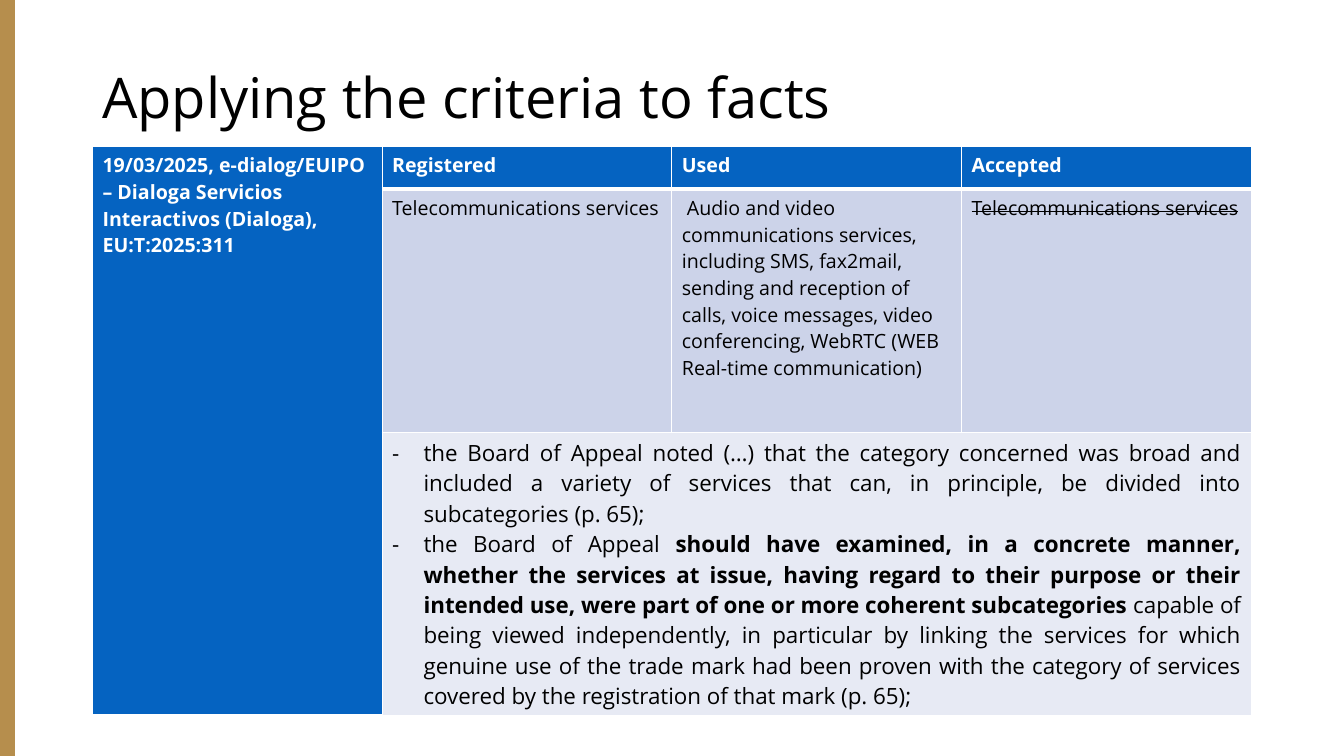
from lxml.etree import SubElement, fromstring
from pptx import Presentation
from pptx.dml.color import RGBColor
from pptx.enum.shapes import MSO_SHAPE as Shape
from pptx.enum.text import MSO_ANCHOR as Anchor, PP_ALIGN as Align
from pptx.oxml.ns import nsdecls, qn
from pptx.util import Cm, Pt

COLORS = {
    "gold": "B68E4D",
    "blue": "0563C1",
    "services": "CCD3E9",
    "findings": "E7EAF4",
    "white": "FFFFFF",
    "black": "000000",
}


def style_run(span, size, color, bold=False):
    span.font.name = "Open Sans"
    span.font.size = Pt(size)
    span.font.bold = bold
    span.font.color.rgb = RGBColor.from_string(COLORS[color])


def style_cell(cell, fill, top, bottom):
    cell.fill.solid()
    cell.fill.fore_color.rgb = RGBColor.from_string(COLORS[fill])
    properties = cell._tc.get_or_add_tcPr()
    borders = [("lnL", 1), ("lnR", 1), ("lnT", top), ("lnB", bottom)]
    for position, (side, width) in enumerate(borders):
        line = fromstring(
            f'<a:{side} {nsdecls("a")} w="{Pt(width)}"><a:solidFill>'
            f'<a:srgbClr val="{COLORS["white"]}"/></a:solidFill></a:{side}>'
        )
        properties.insert(position, line)


deck = Presentation()
deck.slide_width = Cm(33.87)
deck.slide_height = Cm(19.05)
page = deck.slides.add_slide(deck.slide_layouts[6])

stripe = page.shapes.add_shape(Shape.RECTANGLE, 0, 0, Cm(0.38), deck.slide_height)
stripe.shadow.inherit = False
stripe.fill.solid()
stripe.fill.fore_color.rgb = RGBColor.from_string(COLORS["gold"])
stripe.line.fill.background()

title = page.shapes.add_textbox(Cm(2.33), Cm(1.02), Cm(29.21), Cm(3.02))
title.text_frame.word_wrap = True
title.text_frame.vertical_anchor = Anchor.MIDDLE
title.text_frame.text = "Applying the criteria to facts"
title.text_frame.paragraphs[0].line_spacing = 0.9
style_run(title.text_frame.paragraphs[0].runs[0], 40, "black")

row_heights = [1.07, 6.13, 7.13]
table = page.shapes.add_table(
    3, 4, Cm(2.33), Cm(3.7), Cm(29.21), Cm(sum(row_heights))
).table
for row, height in zip(table.rows, row_heights):
    row.height = Cm(height)
for column in table.columns:
    column.width = Cm(7.3)

row_styles = [("blue", 1, 3), ("services", 3, 1), ("findings", 1, 1)]
for row, (fill, top, bottom) in zip(table.rows, row_styles):
    for number, cell in enumerate(row.cells):
        style_cell(cell, fill if number else "blue", top, bottom)

table.cell(0, 0).merge(table.cell(2, 0))
table.cell(2, 1).merge(table.cell(2, 3))

case_and_headings = [
    "19/03/2025, e-dialog/EUIPO – Dialoga Servicios Interactivos (Dialoga), EU:T:2025:311",
    "Registered",
    "Used",
    "Accepted",
]
services = [
    "",
    "Telecommunications services",
    " Audio and video communications services, including SMS, fax2mail, sending and "
    "reception of calls, voice messages, video conferencing, WebRTC (WEB Real-time communication)",
    "Telecommunications services",
]
for row, texts in enumerate([case_and_headings, services]):
    for column, text in enumerate(texts):
        if text:
            cell = table.cell(row, column)
            cell.text_frame.text = text
            span = cell.text_frame.paragraphs[0].runs[0]
            style_run(span, 14, "black" if row else "white", bold=row == 0)

rejected = table.cell(1, 3).text_frame.paragraphs[0].runs[0]
rejected._r.get_or_add_rPr().set("strike", "sngStrike")

findings = [
    [
        ("the Board of Appeal noted (…) that the category concerned was broad and included "
         "a variety of services that can, in principle, be divided into subcategories (p. 65); ", False),
    ],
    [
        ("the Board of Appeal", False),
        (" should have examined, in a concrete manner, whether the services at issue, having "
         "regard to their purpose or their intended use, were part of one or more coherent "
         "subcategories ", True),
        ("capable of being viewed independently, in particular by linking the services for "
         "which genuine use of the trade mark had been proven with the category of services "
         "covered by the registration of that mark (p. 65); ", False),
    ],
]
frame = table.cell(2, 1).text_frame
for number, parts in enumerate(findings):
    para = frame.add_paragraph() if number else frame.paragraphs[0]
    para.alignment = Align.JUSTIFY
    properties = para._p.get_or_add_pPr()
    properties.set("marL", str(Cm(0.79)))
    properties.set("indent", str(-Cm(0.79)))
    SubElement(properties, qn("a:buFont"), typeface="Open Sans")
    SubElement(properties, qn("a:buChar"), char="-")
    for text, bold in parts:
        span = para.add_run()
        span.text = text
        style_run(span, 16, "black", bold)

deck.save("out.pptx")
